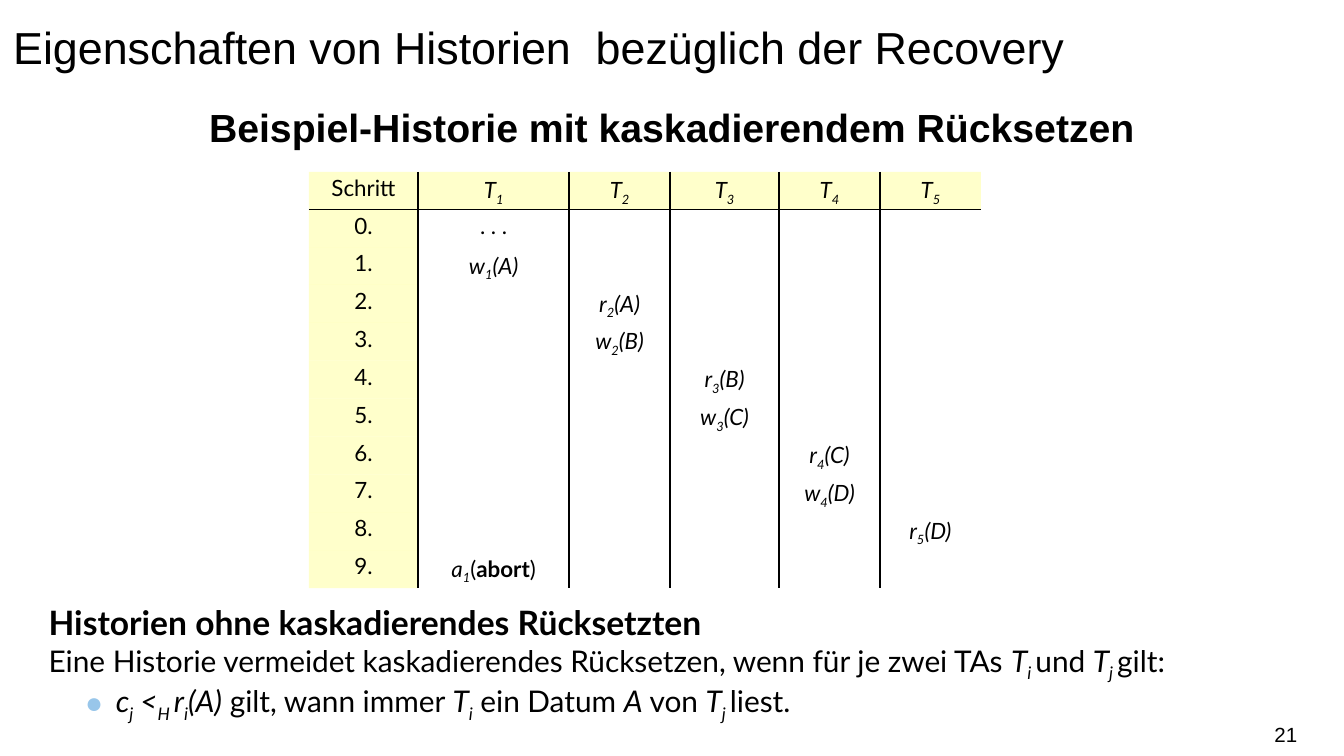
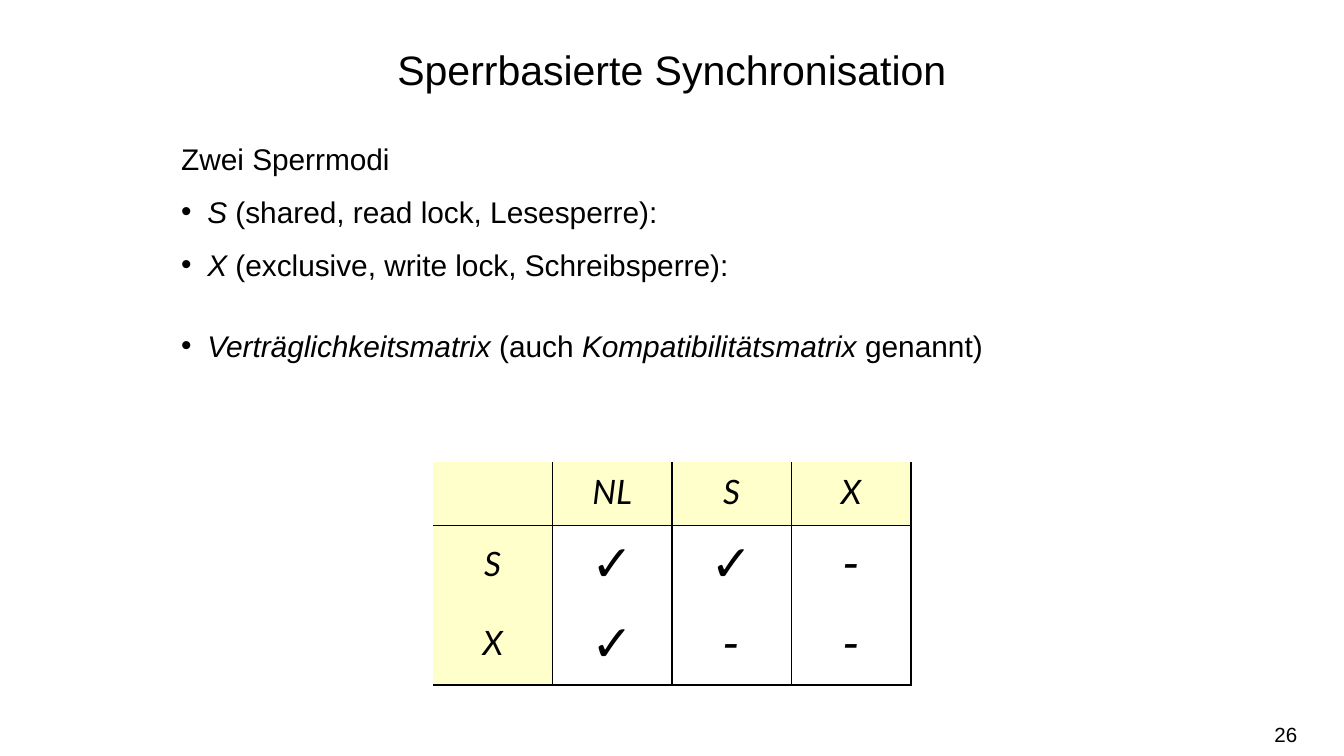
"""Build two lecture slides on cascading rollback and lock modes."""
from lxml.etree import SubElement
from pptx import Presentation
from pptx.dml.color import RGBColor
from pptx.enum.text import MSO_ANCHOR, PP_ALIGN
from pptx.oxml.ns import qn
from pptx.util import Pt

HUES = {"ink": "000000", "head": "FFFF99", "dot": "98C6EA"}
SANS, LATO = "Arial", "Lato"
TOP, MID = MSO_ANCHOR.TOP, MSO_ANCHOR.MIDDLE
LEFT, MIDST, RIGHT = PP_ALIGN.LEFT, PP_ALIGN.CENTER, PP_ALIGN.RIGHT


def write(par, text, size, face):
    """Add runs split by |, each with optional flags i, b, s before ^."""
    for part in text.split("|") if text else []:
        flags, _, word = part.rpartition("^")
        run = par.add_run()
        run.text = word
        font = run.font
        font.name, font.size = face, Pt(size)
        font.color.rgb = RGBColor.from_string(HUES["ink"])
        font.italic, font.bold = "i" in flags, "b" in flags
        if "s" in flags:
            run._r.get_or_add_rPr().set("baseline", "-25000")
    if not text:
        SubElement(par._p, qn("a:endParaRPr")).set("sz", str(size * 100))


def box(slide, area, lines, face=SANS, anchor=TOP, align=LEFT, pitch=None):
    """Place a text box; lines hold text, size, space after and bullet."""
    frame = slide.shapes.add_textbox(*map(Pt, area)).text_frame
    frame.word_wrap = True
    frame.vertical_anchor = anchor
    for num, (text, size, after, mark) in enumerate(lines):
        par = frame.add_paragraph() if num else frame.paragraphs[0]
        if mark:
            sign, left, hang, hue = mark
            props = par._p.get_or_add_pPr()
            props.set("marL", str(Pt(left)))
            props.set("indent", str(Pt(-hang)))
            tint = SubElement(props, qn("a:buClr"))
            SubElement(tint, qn("a:srgbClr")).set("val", HUES[hue])
            SubElement(props, qn("a:buFont")).set("typeface", SANS)
            SubElement(props, qn("a:buChar")).set("char", sign)
        par.alignment = align
        par.space_after = Pt(after)
        if pitch:
            par.line_spacing = pitch
        write(par, text, size, face)
    return frame


deck = Presentation()
deck.slide_width, deck.slide_height = Pt(720), Pt(405)

heads = [
    ("Eigenschaften von Historien  bezüglich der Recovery", 24, TOP, LEFT, "21"),
    ("Sperrbasierte Synchronisation", 22, MID, MIDST, "26"),
]
pages = []
for title, size, anchor, align, page in heads:
    slide = deck.slides.add_slide(deck.slide_layouts[6])
    box(slide, (0, 0, 720, 67.5), [(title, size, 0, None)],
        anchor=anchor, align=align, pitch=1.25)
    foot = box(slide, (533.5, 382.5, 161.5, 21.5), [(page, 11, 0, None)],
               anchor=MID, align=RIGHT)
    foot.margin_left = foot.margin_right = 0
    pages.append(slide)
undo, lock = pages

box(undo, (90, 52, 540, 32),
    [("b^Beispiel-Historie mit kaskadierendem Rücksetzen", 21, 0, None)],
    anchor=MID, align=MIDST)
rule = ("Eine Historie vermeidet kaskadierendes Rücksetzen, wenn für je zwei TAs "
        "|i^T|is^i |und |i^T|is^j |gilt:")
case = ("i^c|is^j|i^ <|is^H |i^r|is^i|i^(A)| gilt, wann immer |i^T|is^i"
        "| ein Datum |i^A| von |i^T|is^j |liest.")
box(undo, (19, 319, 639.5, 67.5), [
    ("b^Historien ohne kaskadierendes Rücksetzten", 18, 0, None),
    (rule, 16, 0, None),
    (case, 16, 0, ("●", 36, 16.5, "dot")),
], face=LATO)

dot = ("•", 14, 14, "ink")
box(lock, (90, 72, 540, 171.5), [
    ("Zwei Sperrmodi", 16, 9, None),
    ("i^S| (shared, read lock, Lesesperre):", 16, 9, dot),
    ("i^X| (exclusive, write lock, Schreibsperre):", 16, 24.5, dot),
    ("i^Verträglichkeitsmatrix |(auch |i^Kompatibilitätsmatrix| genannt)",
     16, 0, dot),
])

steps = [["Schritt"] + [f"i^T|is^{num}" for num in range(1, 6)]]
steps += [[f"{num}."] + [""] * 5 for num in range(10)]
steps[1][1] = ". . ."
steps[10][1] = "i^a|is^1|(|b^abort|)"
for num, (act, who, item) in enumerate(
        ["w1A", "r2A", "w2B", "r3B", "w3C", "r4C", "w4D", "r5D"], 2):
    steps[num][int(who)] = f"i^{act}|is^{who}|i^({item})"

modes = [["", "i^NL", "i^S", "i^X"],
         ["i^S", "i^✓", "i^✓", "i^-"],
         ["i^X", "i^✓", "i^-", "i^-"]]

grids = [
    (undo, 165.5, 92, steps, [58.5, 81, 54, 58.5, 54, 54], [20.05] * 11,
     12, 12, TOP, False),
    (lock, 232, 247.5, modes, [64] * 4, [34, 42.75, 42.75],
     18, 27, MID, True),
]
for slide, left, top, data, wides, highs, small, big, anchor, shut in grids:
    area = (left, top, sum(wides), sum(highs))
    table = slide.shapes.add_table(len(data), len(wides), *map(Pt, area)).table
    table.first_row = table.horz_banding = False
    for col, wide in zip(table.columns, wides):
        col.width = Pt(wide)
    for row, high in zip(table.rows, highs):
        row.height = Pt(high)
    endx, endy = len(wides) - 1, len(highs) - 1
    for y, line in enumerate(data):
        for x, text in enumerate(line):
            cell = table.cell(y, x)
            cell.margin_left = cell.margin_right = Pt(5)
            cell.margin_top = cell.margin_bottom = Pt(2.8)
            cell.vertical_anchor = anchor
            head = x == 0 or y == 0
            par = cell.text_frame.paragraphs[0]
            par.alignment = MIDST
            par.line_spacing = 0.9
            write(par, text, small if head else big, LATO)
            props = cell._tc.get_or_add_tcPr()
            sides = {"L": x > 0, "R": x < endx or shut,
                     "T": y == 1, "B": y == 0 or (shut and y == endy)}
            for side, seen in sides.items():
                edge = SubElement(props, qn(f"a:ln{side}"))
                edge.set("w", str(Pt(1)))
                if seen:
                    ink = SubElement(edge, qn("a:solidFill"))
                    SubElement(ink, qn("a:srgbClr")).set("val", HUES["ink"])
                else:
                    SubElement(edge, qn("a:noFill"))
            if head:
                cell.fill.solid()
                cell.fill.fore_color.rgb = RGBColor.from_string(HUES["head"])
                tone = props.find(qn("a:solidFill")).find(qn("a:srgbClr"))
                SubElement(tone, qn("a:alpha")).set("val", "50000")
            else:
                cell.fill.background()

deck.save("out.pptx")
